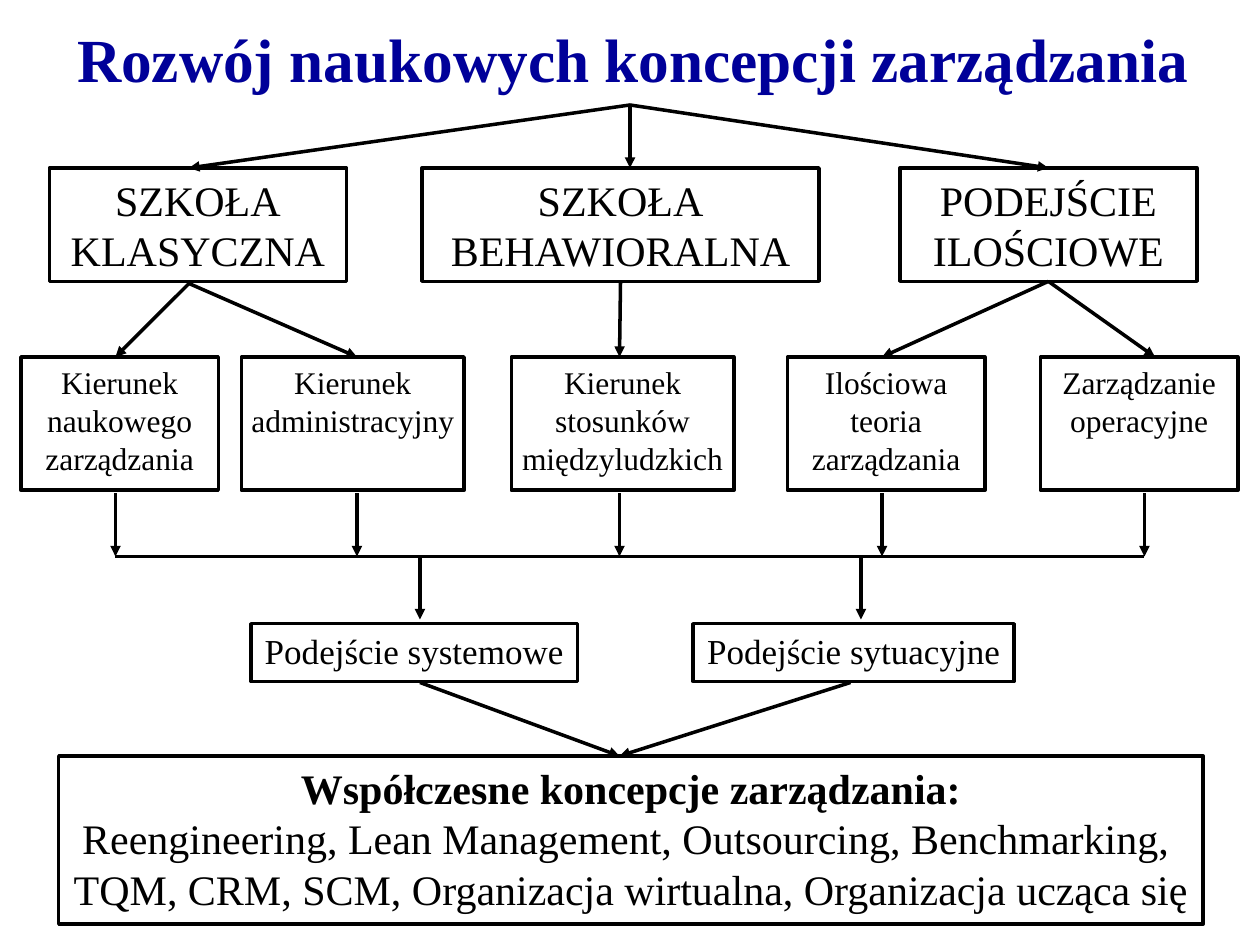
from lxml.etree import SubElement
from pptx import Presentation
from pptx.dml.color import RGBColor
from pptx.enum.shapes import MSO_CONNECTOR, MSO_SHAPE
from pptx.enum.text import MSO_ANCHOR, PP_ALIGN
from pptx.oxml.ns import qn
from pptx.util import Emu, Pt

PX = 7620
FONT = "Times New Roman"
COLORS = {"title": "000099", "ink": "000000"}
TOP, BOTTOM = 0, 2
TOLERANCE = 2

SCHOOLS = [
    (47, 283, ["SZKOŁA", "KLASYCZNA"]),
    (402, 378, ["SZKOŁA", "BEHAWIORALNA"]),
    (857, 283, ["PODEJŚCIE", "ILOŚCIOWE"]),
]
DIRECTIONS = [
    (20, 188, ["Kierunek", "naukowego", "zarządzania"]),
    (230, 212, ["Kierunek", "administracyjny"]),
    (487, 212, ["Kierunek", "stosunków", "międzyludzkich"]),
    (750, 188, ["Ilościowa", "teoria", "zarządzania"]),
    (991, 188, ["Zarządzanie", "operacyjne"]),
]
APPROACHES = [
    (239, 311, ["Podejście systemowe"]),
    (660, 306, ["Podejście sytuacyjne"]),
]
CONCEPTS = [
    "Współczesne koncepcje zarządzania:",
    "Reengineering, Lean Management, Outsourcing, Benchmarking, \v"
    "TQM, CRM, SCM, Organizacja wirtualna, Organizacja ucząca się",
]
# (top, bottom, [(from x, to x), ...])
ARROWS = [
    (100, 160, [(600, 180), (600, 600), (600, 1000)]),
    (270, 340, [(180, 110), (180, 340), (590, 590), (1000, 840), (1000, 1100)]),
    (470, 530, [(x, x) for x in (110, 340, 590, 840, 1090)]),
    (530, 590, [(400, 400), (820, 820)]),
    (650, 720, [(400, 590), (810, 590)]),
]


def px(n):
    """Turn px into EMU."""
    return Emu(round(n * PX))


def rgb(name):
    """Look up a named colour."""
    return RGBColor.from_string(COLORS[name])


def write(tf, lines, size=24, color="ink", bold=False, bold_first=False,
          anchor=MSO_ANCHOR.TOP, wrap=False):
    """Fill a text frame with centred paragraphs."""
    tf.word_wrap = wrap
    tf.vertical_anchor = anchor
    for i, line in enumerate(lines):
        p = tf.add_paragraph() if i else tf.paragraphs[0]
        p.text = line
        p.alignment = PP_ALIGN.CENTER
        for r in p.runs:
            r.font.name = FONT
            r.font.size = Pt(size)
            r.font.bold = bold or (bold_first and i == 0)
            r.font.color.rgb = rgb(color)


def add_title(s, text):
    """Place and format the title placeholder."""
    sp = s.shapes.title
    sp.left, sp.top, sp.width, sp.height = map(px, (58, 20, 1090, 70))
    write(sp.text_frame, [text], size=35, color="title", bold=True,
          anchor=MSO_ANCHOR.MIDDLE, wrap=True)


def add_box(s, x, y, w, h, lines, **fmt):
    """Add an outlined rectangle with text."""
    sp = s.shapes.add_shape(MSO_SHAPE.RECTANGLE, *map(px, (x, y, w, h)))
    sp.shadow.inherit = False
    sp.fill.background()
    sp.line.color.rgb = rgb("ink")
    sp.line.width = Pt(2)
    write(sp.text_frame, lines, **fmt)
    return sp


def add_row(s, y, h, items, size):
    """Add a row of boxes with a shared top and height."""
    return [add_box(s, x, y, w, h, lines, size=size) for x, w, lines in items]


def find_site(boxes, x, y):
    """Return the box and site whose side middle lies at a point."""
    for sp in boxes:
        for site, edge in ((TOP, sp.top), (BOTTOM, sp.top + sp.height)):
            gaps = (sp.left + sp.width / 2 - px(x), edge - px(y))
            if max(map(abs, gaps)) <= px(TOLERANCE):
                return sp, site
    return None


def add_line(s, x1, y1, x2, y2, boxes=(), arrow=True):
    """Add a straight line, joined to any box side it meets in the middle."""
    c = s.shapes.add_connector(MSO_CONNECTOR.STRAIGHT,
                               *map(px, (x1, y1, x2, y2)))
    c.line.color.rgb = rgb("ink")
    c.line.width = Pt(2)
    if arrow:
        SubElement(c.line._get_or_add_ln(), qn("a:tailEnd"), type="triangle")
    SubElement(c._element.spPr, qn("a:effectLst"))
    for x, y, connect in ((x1, y1, c.begin_connect), (x2, y2, c.end_connect)):
        found = find_site(boxes, x, y)
        if found:
            connect(*found)


def main():
    """Build the slide and save it."""
    prs = Presentation()
    prs.slide_width, prs.slide_height = px(1200), px(900)
    s = prs.slides.add_slide(prs.slide_layouts[5])
    add_title(s, "Rozwój naukowych koncepcji zarządzania")
    boxes = add_row(s, 160, 108, SCHOOLS, 24)
    boxes += add_row(s, 340, 127, DIRECTIONS, 18)
    boxes += add_row(s, 594, 55, APPROACHES, 20)
    boxes.append(add_box(s, 56, 720, 1090, 160, CONCEPTS, bold_first=True))
    for y1, y2, spans in ARROWS:
        for x1, x2 in spans:
            add_line(s, x1, y1, x2, y2, boxes)
    add_line(s, 110, 530, 1090, 530, arrow=False)
    prs.save("out.pptx")


if __name__ == "__main__":
    main()
